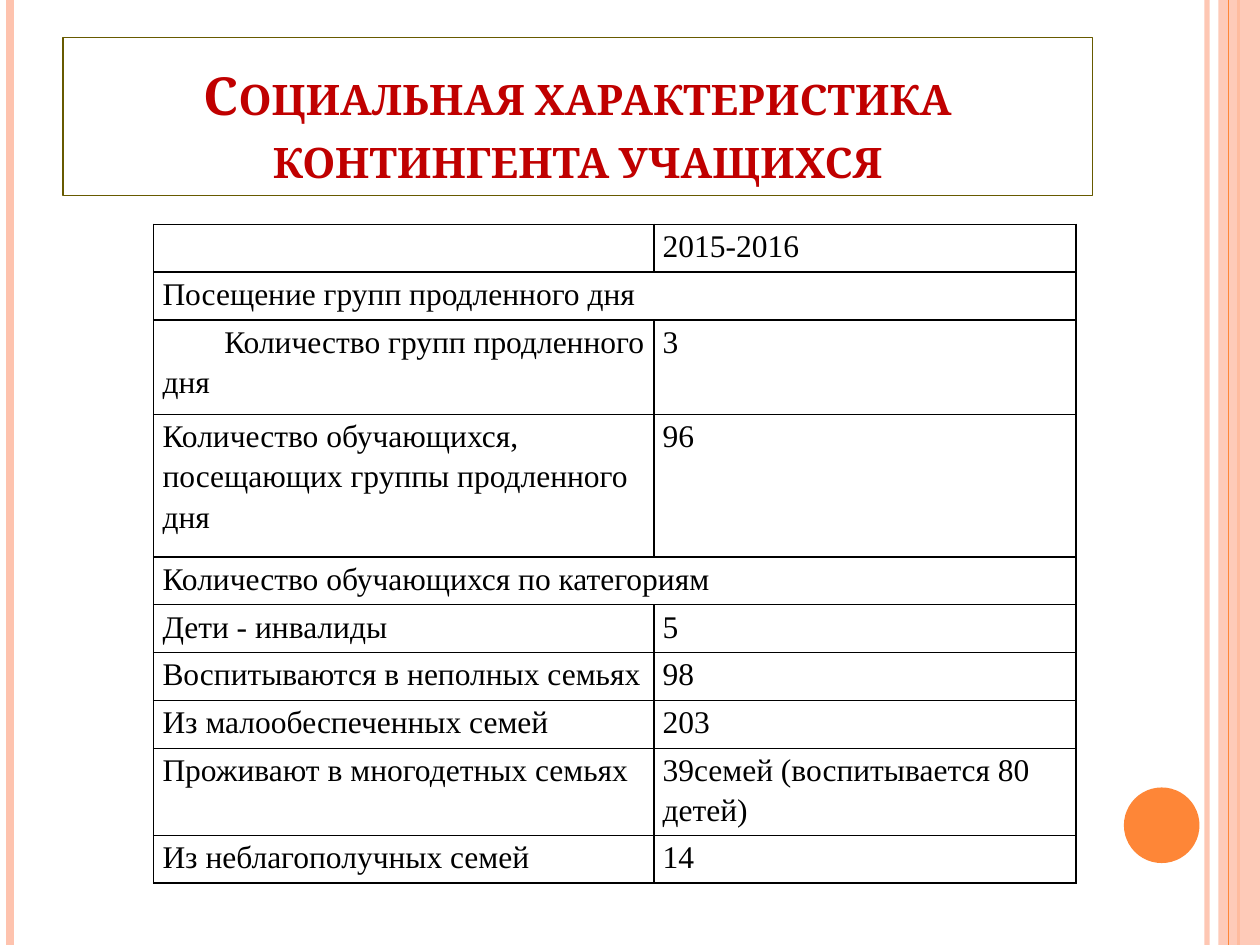
from dataclasses import dataclass

from lxml import etree
from pptx import Presentation
from pptx.dml.color import RGBColor
from pptx.enum.shapes import MSO_CONNECTOR, MSO_SHAPE
from pptx.enum.text import MSO_ANCHOR, PP_ALIGN
from pptx.oxml.ns import qn
from pptx.util import Inches, Pt

STRAIGHT = MSO_CONNECTOR.STRAIGHT
RECTANGLE, OVAL = MSO_SHAPE.RECTANGLE, MSO_SHAPE.OVAL
BOTTOM, CENTER = MSO_ANCHOR.BOTTOM, PP_ALIGN.CENTER


@dataclass(frozen=True)
class Theme:
    peach: str = "FEC3AE"
    orange: str = "FE8637"
    title: str = "C00000"
    frame: str = "675A00"
    ink: str = "000000"
    title_font: str = "Cambria"
    table_font: str = "Times New Roman"
    title_size: int = 30
    table_size: int = 18


@dataclass(frozen=True)
class Stripe:
    x: float
    color: str
    width: float
    opacity: int = 100


@dataclass(frozen=True)
class Row:
    label: str
    value: str | None
    height: float = 0.38
    indent: float = 0


THEME = Theme()
WIDTH, HEIGHT = 10, 7.5
OUTER_STRIPES = [
    Stripe(9.58, THEME.peach, 3, 93),
    Stripe(0.08, THEME.peach, 4.5),
    Stripe(9.83, THEME.orange, 1.5),
]
INNER_STRIPE = Stripe(9.75, THEME.orange, 0.75)
COLUMNS = [3.97, 3.35]
ROWS = [
    Row("", "2015-2016"),
    Row("Посещение групп продленного дня", None),
    Row("Количество групп продленного дня", "3", 0.75, 0.49),
    Row("Количество обучающихся, посещающих группы продленного дня", "96", 1.13),
    Row("Количество обучающихся по категориям", None),
    Row("Дети - инвалиды", "5"),
    Row("Воспитываются в неполных семьях", "98"),
    Row("Из малообеспеченных семей", "203"),
    Row("Проживают в многодетных семьях", "39семей (воспитывается 80 детей)"),
    Row("Из неблагополучных семей", "14"),
]


def rgb(color: str) -> RGBColor:
    """Turn a hex colour into an RGBColor."""
    return RGBColor.from_string(color)


def set_opacity(shape, percent: int) -> None:
    """Make the only colour of a shape partly transparent."""
    for color in shape._element.spPr.iter(qn("a:srgbClr")):
        etree.SubElement(color, qn("a:alpha"), val=str(percent * 1000))


def add_stripe(page, stripe: Stripe) -> None:
    """Draw a vertical line over the full height of the page."""
    x = Inches(stripe.x)
    line = page.shapes.add_connector(STRAIGHT, x, 0, x, Inches(HEIGHT))
    line.line.color.rgb = rgb(stripe.color)
    line.line.width = Pt(stripe.width)
    if stripe.opacity < 100:
        set_opacity(line, stripe.opacity)
    etree.SubElement(line._element.spPr, qn("a:effectLst"))


def add_plain_shape(page, kind, box: tuple, color: str):
    """Draw a filled shape without outline or shadow."""
    shape = page.shapes.add_shape(kind, *map(Inches, box))
    shape.shadow.inherit = False
    shape.fill.solid()
    shape.fill.fore_color.rgb = rgb(color)
    shape.line.fill.background()
    return shape


def style_font(font, name: str, size: int, color: str, bold: bool) -> None:
    """Apply typeface, size, colour and weight."""
    font.name, font.size, font.bold = name, Pt(size), bold
    font.color.rgb = rgb(color)


def add_title(page, text: str) -> None:
    """Add the framed title in small capitals."""
    box = page.shapes.add_textbox(Inches(0.5), Inches(0.3), Inches(8.17), Inches(1.25))
    box.line.color.rgb = rgb(THEME.frame)
    box.line.width = Pt(0.75)
    frame = box.text_frame
    frame.word_wrap = True
    frame.vertical_anchor = BOTTOM
    frame.text = text
    para = frame.paragraphs[0]
    para.alignment = CENTER
    span = para.runs[0]
    style_font(span.font, THEME.title_font, THEME.title_size, THEME.title, True)
    span._r.get_or_add_rPr().set("cap", "small")


def add_borders(cell) -> None:
    """Outline all four sides of a cell."""
    properties = cell._tc.get_or_add_tcPr()
    for side in ("lnL", "lnR", "lnT", "lnB"):
        line = etree.SubElement(properties, qn(f"a:{side}"), w=str(Pt(1)))
        fill = etree.SubElement(line, qn("a:solidFill"))
        etree.SubElement(fill, qn("a:srgbClr"), val=THEME.ink)


def fill_cell(cell, text: str, indent: float = 0) -> None:
    """Write and format one table cell."""
    cell.margin_left = cell.margin_right = Inches(0.07)
    cell.margin_top = cell.margin_bottom = 0
    add_borders(cell)
    cell.fill.background()
    cell.text = text
    para = cell.text_frame.paragraphs[0]
    para.line_spacing = 1.15
    if indent:
        para._p.get_or_add_pPr().set("indent", str(Inches(indent)))
    for span in para.runs:
        style_font(span.font, THEME.table_font, THEME.table_size, THEME.ink, False)


def add_pupil_table(page) -> None:
    """Build the table of pupil numbers."""
    height = sum(row.height for row in ROWS)
    table = page.shapes.add_table(
        len(ROWS), len(COLUMNS), Inches(1.22), Inches(1.78),
        Inches(sum(COLUMNS)), Inches(height),
    ).table
    table.first_row = table.horz_banding = False
    for column, width in zip(table.columns, COLUMNS):
        column.width = Inches(width)
    for index, row in enumerate(ROWS):
        table.rows[index].height = Inches(row.height)
        label, value = table.cell(index, 0), table.cell(index, 1)
        fill_cell(label, row.label, row.indent)
        fill_cell(value, row.value or "")
        if row.value is None:
            label.merge(value)


def main() -> None:
    """Build and save the deck."""
    deck = Presentation()
    deck.slide_width, deck.slide_height = Inches(WIDTH), Inches(HEIGHT)
    page = deck.slides.add_slide(deck.slide_layouts[6])
    for stripe in OUTER_STRIPES:
        add_stripe(page, stripe)
    band = add_plain_shape(page, RECTANGLE, (9.67, 0, 0.33, HEIGHT), THEME.peach)
    set_opacity(band, 87)
    add_stripe(page, INNER_STRIPE)
    add_plain_shape(page, OVAL, (8.92, 6.25, 0.6, 0.6), THEME.orange)
    add_title(page, "Социальная характеристика контингента учащихся")
    add_pupil_table(page)
    deck.save("out.pptx")


if __name__ == "__main__":
    main()
